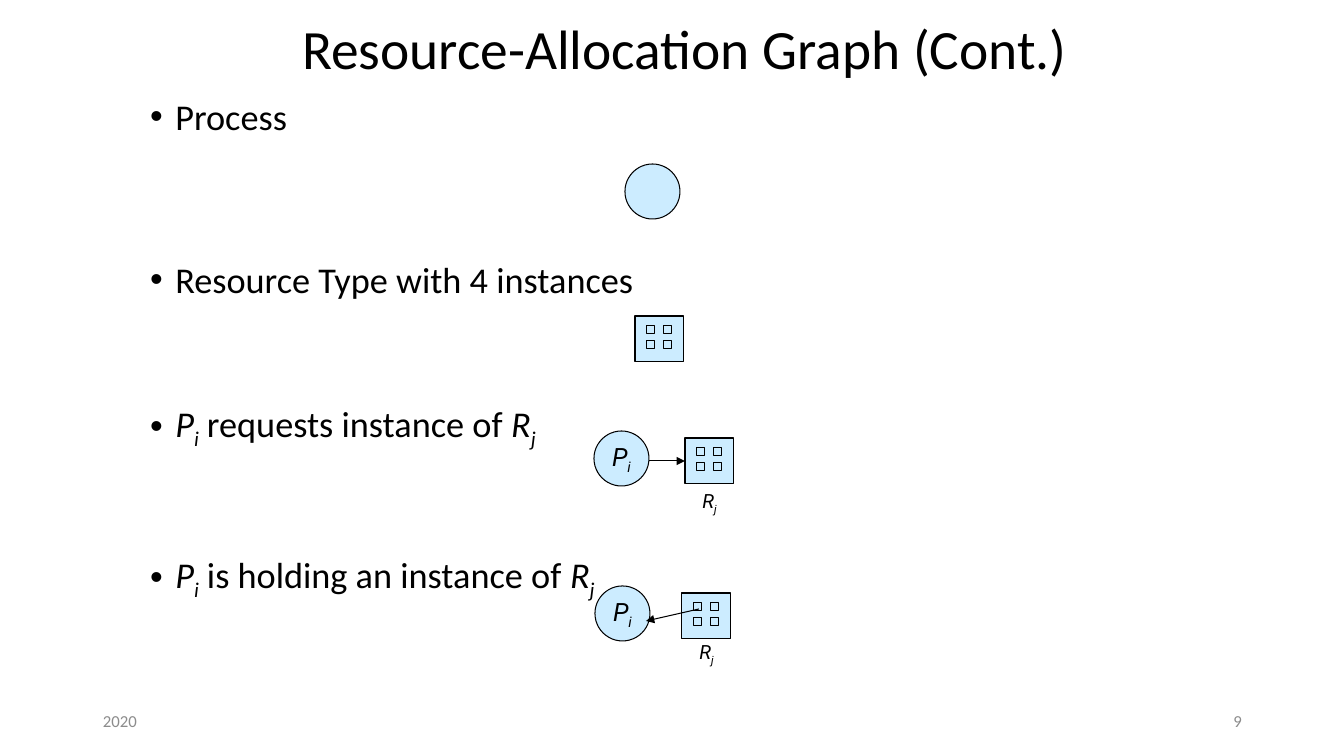
from dataclasses import dataclass
from itertools import product

from pptx import Presentation
from pptx import util as u
from pptx.dml.color import RGBColor
from pptx.enum import shapes, text
from pptx.oxml.ns import qn
from lxml import etree

SCALE = 914400 / 100.8  # EMU per px


@dataclass(frozen=True)
class Theme:
    ink: str = "000000"
    node: str = "CCECFF"
    muted: str = "8C8C8C"
    body_font: str = "Calibri"
    node_font: str = "Roboto"
    title: float = 39.6
    body: float = 25.9
    process: float = 18
    resource: float = 14
    footer: float = 12
    line: float = 0.75


THEME = Theme()
CIRCLE = 55
BOX_W, BOX_H = 49, 46
INSTANCE = 8


def px(*lengths):
    return [u.Emu(round(n * SCALE)) for n in lengths]


def rgb(value):
    return RGBColor.from_string(value)


def write(p, words, size, font=THEME.body_font, color=THEME.ink, italic=False, sub=False):
    r = p.add_run()
    r.text = words
    r.font.size, r.font.name, r.font.italic = u.Pt(size), font, italic
    r.font.color.rgb = rgb(color)
    if sub:
        r.font._element.set("baseline", "-25000")


def write_symbol(p, symbol, size, **fmt):
    """Write an italic letter with its subscript, given as "P_i"."""
    letter, index = symbol.split("_")
    write(p, letter, size, italic=True, **fmt)
    write(p, index, size, italic=True, sub=True, **fmt)


def set_frame(sp, anchor=text.MSO_ANCHOR.MIDDLE, wrap=True):
    tf = sp.text_frame
    tf.word_wrap, tf.vertical_anchor = wrap, anchor
    tf.auto_size = text.MSO_AUTO_SIZE.NONE
    return tf


def place(sp, box):
    sp.left, sp.top, sp.width, sp.height = px(*box)


def add_node(parent, kind, box):
    sp = parent.add_shape(kind, *px(*box))
    sp.shadow.inherit = False
    sp.fill.solid()
    sp.fill.fore_color.rgb = rgb(THEME.node)
    sp.line.color.rgb = rgb(THEME.ink)
    sp.line.width = u.Pt(THEME.line)
    return sp


def add_process(s, x, y, symbol=None):
    sp = add_node(s.shapes, shapes.MSO_SHAPE.OVAL, (x, y, CIRCLE, CIRCLE))
    if symbol:
        p = set_frame(sp, wrap=False).paragraphs[0]
        p.alignment = text.PP_ALIGN.CENTER
        write_symbol(p, symbol, THEME.process, font=THEME.node_font)


def add_resource(s, x, y, symbol=None, label_dy=47):
    group = s.shapes.add_group_shape().shapes
    rect = shapes.MSO_SHAPE.RECTANGLE
    sp = add_node(group, rect, (x, y, BOX_W, BOX_H))
    for dy, dx in product((10, 25), (12, 29)):
        add_node(group, rect, (x + dx, y + dy, INSTANCE, INSTANCE))
    if symbol:
        label = s.shapes.add_textbox(*px(x + 6, y + label_dy, 37, 34))
        p = set_frame(label, wrap=False).paragraphs[0]
        p.alignment = text.PP_ALIGN.CENTER
        write_symbol(p, symbol, THEME.resource, font=THEME.node_font)
    return sp


def add_arrow(s, start, end):
    line = s.shapes.add_connector(shapes.MSO_CONNECTOR.STRAIGHT, *px(*start, *end))
    line.line.color.rgb = rgb(THEME.ink)
    line.line.width = u.Pt(THEME.line)
    etree.SubElement(line.line._get_or_add_ln(), qn("a:tailEnd"), type="triangle")
    etree.SubElement(line._element.spPr, qn("a:effectLst"))
    return line


def add_title(s, box):
    sp = s.shapes.title
    place(sp, box)
    p = set_frame(sp).paragraphs[0]
    p.alignment, p.line_spacing = text.PP_ALIGN.LEFT, 0.9
    write(p, "Resource-Allocation Graph (Cont.)", THEME.title)


def add_bullets(s, box):
    # Each bullet: space before in points, then its parts
    bullets = [
        (0, ["Process"]),
        (90.5, ["Resource Type with 4 instances"]),
        (81.5, ["P_i", " requests instance of ", "R_j"]),
        (81.5, ["P_i", " is holding an instance of ", "R_j"]),
    ]
    sp = s.placeholders[1]
    place(sp, box)
    tf = set_frame(sp, text.MSO_ANCHOR.TOP)
    for i, (before, parts) in enumerate(bullets):
        p = tf.add_paragraph() if i else tf.paragraphs[0]
        p.space_before, p.line_spacing = u.Pt(before), u.Pt(26)
        pPr = p._p.get_or_add_pPr()
        pPr.set("marL", str(u.Inches(0.25)))
        pPr.set("indent", str(-u.Inches(0.25)))
        etree.SubElement(pPr, qn("a:buFont"), typeface="Arial")
        etree.SubElement(pPr, qn("a:buChar"), char="•")
        for part in parts:
            (write_symbol if "_" in part else write)(p, part, THEME.body)


def add_request(s, x, y):
    add_process(s, x, y, "P_i")
    resource = add_resource(s, x + 91, y + 7, "R_j")
    arrow = add_arrow(s, (x + CIRCLE, y + 30), (x + 91, y + 30))
    arrow.end_connect(resource, 1)


def add_assignment(s, x, y):
    add_process(s, x, y, "P_i")
    add_resource(s, x + 87, y + 7, "R_j", label_dy=43)
    add_arrow(s, (x + 104, y + 23), (x + 51, y + 35))


def add_footer(s, x, y, right):
    width = 302
    for left, words, align in ((x, "2020", text.PP_ALIGN.LEFT),
                               (right - width, "9", text.PP_ALIGN.RIGHT)):
        p = set_frame(s.shapes.add_textbox(*px(left, y, width, 40))).paragraphs[0]
        p.alignment = align
        write(p, words, THEME.footer, color=THEME.muted)


def main():
    prs = Presentation()
    prs.slide_width, prs.slide_height = px(1344, 756)
    s = prs.slides.add_slide(prs.slide_layouts[1])
    add_title(s, (292, 20, 861, 64))
    add_bullets(s, (140, 96, 809, 499))
    # Legend symbols and edges
    add_process(s, 625, 164)
    add_resource(s, 635, 316)
    add_request(s, 594, 431)
    add_assignment(s, 595, 586)
    add_footer(s, 93, 701, right=1252)
    prs.save("out.pptx")


if __name__ == "__main__":
    main()
